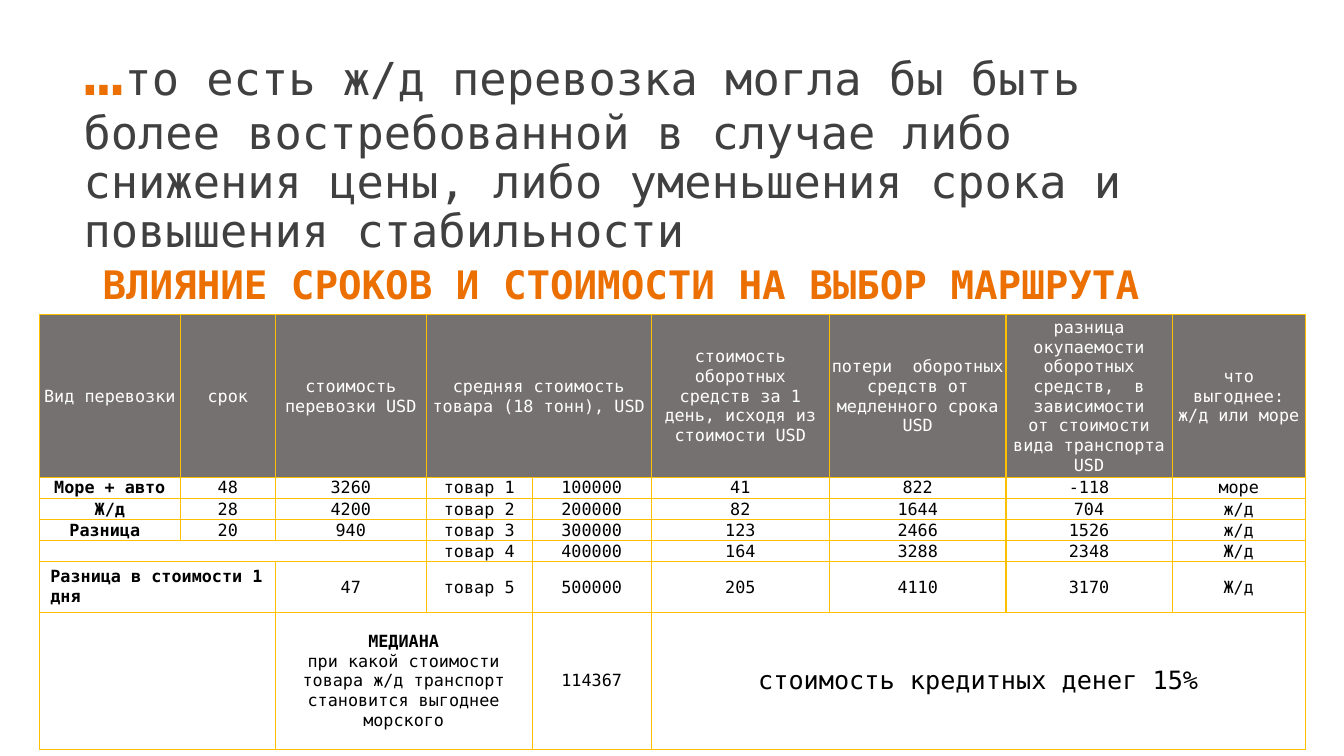
from lxml.etree import SubElement
from pptx import Presentation
from pptx.dml.color import RGBColor
from pptx.enum.text import MSO_ANCHOR, PP_ALIGN
from pptx.oxml.ns import qn
from pptx.util import Pt

FONT = "DejaVu Sans Mono"
COLORS = {"accent": "EC6F01", "title": "404040", "head": "767171",
          "white": "FFFFFF", "ink": "000000", "line": "FFC000"}
TITLE = [
    ("…", 48.6, "accent"),
    ("то есть ж/д перевозка могла бы быть более востребованной в случае "
     "либо снижения цены, либо уменьшения срока и повышения стабильности",
     32.4, "title"),
]
SUBHEAD = "ВЛИЯНИЕ СРОКОВ И СТОИМОСТИ НА ВЫБОР МАРШРУТА"
MEDIAN = ("при какой стоимости товара ж/д транспорт становится "
          "выгоднее морского")
ROWS = [
    ["Вид перевозки", "срок", "стоимость перевозки USD",
     "средняя стоимость товара (18 тонн), USD", "",
     "стоимость оборотных\nсредств за 1 день, исходя из стоимости USD",
     "потери  оборотных\nсредств от медленного срока\nUSD",
     "разница окупаемости оборотных средств,  в зависимости\n"
     "от стоимости вида транспорта USD",
     "что выгоднее: ж/д или море"],
    ["Море + авто", "48", "3260", "товар 1", "100000", "41", "822", "-118", "море"],
    ["Ж/д", "28", "4200", "товар 2", "200000", "82", "1644", "704", "ж/д"],
    ["Разница ", "20", "940", "товар 3", "300000", "123", "2466", "1526", "ж/д"],
    ["", "", "", "товар 4", "400000", "164", "3288", "2348", "Ж/д"],
    ["Разница в стоимости 1 дня", "", "47", "товар 5", "500000", "205", "4110",
     "3170", "Ж/д"],
    ["", "", "МЕДИАНА", "", "114367", "стоимость кредитных денег 15%", "", "", ""],
]
SPANS = [(0, 3, 4), (4, 0, 2), (5, 0, 1), (6, 0, 1), (6, 2, 3), (6, 5, 8)]
WIDTHS = [100.8, 67.7, 108, 75.6, 85, 127.4, 126, 118.8, 95]
HEIGHTS = [89.3] + [14.4] * 5 + [97.9]
BOLD = {(row, 0) for row in range(1, 6)} | {(6, 2)}
LARGE = (6, 5)
NOTE = (5, 0)


def style(font, size, color, bold=False):
    """Apply face, size, colour and weight to a font."""
    font.name, font.size, font.bold = FONT, Pt(size), bold
    font.color.rgb = RGBColor.from_string(COLORS[color])


def add_box(slide, left, top, width, height):
    """Add a wrapping text box and return its frame and first paragraph."""
    frame = slide.shapes.add_textbox(
        Pt(left), Pt(top), Pt(width), Pt(height)).text_frame
    frame.word_wrap = True
    par = frame.paragraphs[0]
    par.line_spacing = 0.9
    return frame, par


def add_lines(cell):
    """Draw the four borders of a cell."""
    props = cell._tc.get_or_add_tcPr()
    for place, side in enumerate(("lnL", "lnR", "lnT", "lnB")):
        line = props.makeelement(qn("a:" + side), {"w": str(Pt(1))})
        fill = SubElement(line, qn("a:solidFill"))
        SubElement(fill, qn("a:srgbClr"), val=COLORS["line"])
        props.insert(place, line)


def fill_cell(cell, row, col, text):
    """Set the text, fill and borders of one cell."""
    place = (row, col)
    pads = (7.9, 3.6, 7.9, 3.6) if place == NOTE else (0.7, 0.7, 0.7, 0)
    (cell.margin_left, cell.margin_top,
     cell.margin_right, cell.margin_bottom) = map(Pt, pads)
    cell.vertical_anchor = MSO_ANCHOR.MIDDLE
    cell.fill.solid()
    cell.fill.fore_color.rgb = RGBColor.from_string(
        COLORS["white" if row else "head"])
    par = cell.text_frame.paragraphs[0]
    par.alignment = PP_ALIGN.LEFT if place == NOTE else PP_ALIGN.CENTER
    style(par.font, 18 if place == LARGE else 12,
          "ink" if row else "white", place in BOLD)
    if text:
        par.text = text
    else:
        SubElement(par._p, qn("a:endParaRPr"), sz="1200")
    add_lines(cell)


def main():
    """Build the slide and save it."""
    deck = Presentation()
    deck.slide_width, deck.slide_height = Pt(960), Pt(540)
    slide = deck.slides.add_slide(deck.slide_layouts[6])

    frame, par = add_box(slide, 52.6, 10.8, 828, 223.9)
    frame.vertical_anchor = MSO_ANCHOR.MIDDLE
    frame.margin_bottom = Pt(39)
    for text, size, color in TITLE:
        run = par.add_run()
        run.text = text
        style(run.font, size, color)

    frame, par = add_box(slide, 66.2, 186.5, 828, 47.5)
    par.text = SUBHEAD
    par.space_before = Pt(10)
    style(par.font, 28, "accent", True)

    table = slide.shapes.add_table(
        len(ROWS), len(WIDTHS), Pt(28.1), Pt(224.9),
        Pt(sum(WIDTHS)), Pt(sum(HEIGHTS))).table
    table.first_row = table.horz_banding = False
    for column, width in zip(table.columns, WIDTHS):
        column.width = Pt(width)
    for band, height in zip(table.rows, HEIGHTS):
        band.height = Pt(height)
    for row, texts in enumerate(ROWS):
        for col, text in enumerate(texts):
            fill_cell(table.cell(row, col), row, col, text)
    for row, start, end in SPANS:
        table.cell(row, start).merge(table.cell(row, end))
    par = table.cell(6, 2).text_frame.add_paragraph()
    par.text = MEDIAN
    par.alignment = PP_ALIGN.CENTER
    style(par.font, 12, "ink")

    deck.save("out.pptx")


if __name__ == "__main__":
    main()
